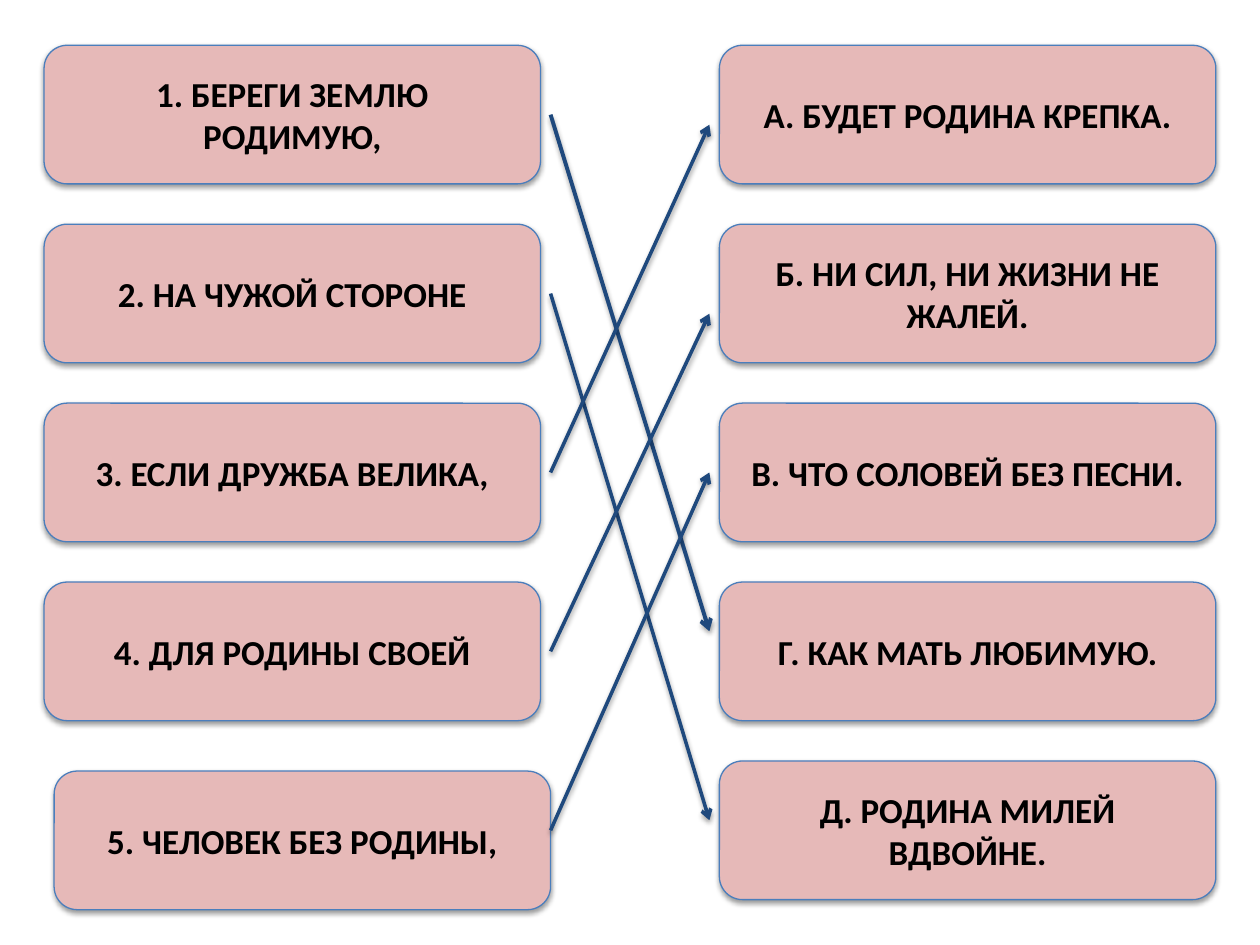
from lxml.etree import SubElement
from pptx import Presentation
from pptx.dml.color import RGBColor
from pptx.enum.shapes import MSO_CONNECTOR, MSO_SHAPE
from pptx.enum.text import MSO_ANCHOR, PP_ALIGN
from pptx.oxml.ns import qn
from pptx.util import Inches, Pt

CARD_WIDTH, CARD_HEIGHT = 3.94, 1.1
TOP, ROW_STEP = 0.36, 1.42
LEFT_COLUMN, RIGHT_COLUMN = 0.35, 5.71
ARROW_GAP = 0.08

BEGINNINGS = [
    "1. БЕРЕГИ ЗЕМЛЮ РОДИМУЮ,",
    "2. НА ЧУЖОЙ СТОРОНЕ",
    "3. ЕСЛИ ДРУЖБА ВЕЛИКА,",
    "4. ДЛЯ РОДИНЫ СВОЕЙ",
    "5. ЧЕЛОВЕК БЕЗ РОДИНЫ,",
]
ENDINGS = [
    "А. БУДЕТ РОДИНА КРЕПКА.",
    "Б. НИ СИЛ, НИ ЖИЗНИ НЕ ЖАЛЕЙ.",
    "В. ЧТО СОЛОВЕЙ БЕЗ ПЕСНИ.",
    "Г. КАК МАТЬ ЛЮБИМУЮ.",
    "Д. РОДИНА МИЛЕЙ ВДВОЙНЕ.",
]
# Start height, end height and line width of each answer arrow
ANSWERS = [
    (0.91, 5.01, 2.25),
    (2.33, 6.51, 2),
    (3.75, 0.99, 2),
    (5.17, 2.49, 2),
    (6.59, 3.75, 2),
]


def color(hex_value):
    return RGBColor.from_string(hex_value)


def add_shadow(shape):
    """Soft shadow just below the shape; call it after the line is set."""
    effects = SubElement(shape._element.spPr, qn("a:effectLst"))
    shadow = SubElement(effects, qn("a:outerShdw"), blurRad=str(Pt(3.1)),
                        dist=str(Pt(1.6)), dir="5400000", rotWithShape="0")
    black = SubElement(shadow, qn("a:srgbClr"), val="000000")
    SubElement(black, qn("a:alpha"), val="38000")


def write_text(shape, text, *, size=20, bold=True, font="Calibri", ink="000000"):
    frame = shape.text_frame
    frame.word_wrap = True
    frame.vertical_anchor = MSO_ANCHOR.MIDDLE
    paragraph = frame.paragraphs[0]
    paragraph.alignment = PP_ALIGN.CENTER
    run = paragraph.add_run()
    run.text = text
    run.font.size = Pt(size)
    run.font.bold = bold
    run.font.name = font
    run.font.color.rgb = color(ink)


def add_card(slide, left, top, width, height, text):
    card = slide.shapes.add_shape(MSO_SHAPE.ROUNDED_RECTANGLE, Inches(left),
                                  Inches(top), Inches(width), Inches(height))
    card.fill.solid()
    card.fill.fore_color.rgb = color("E6B9B8")
    card.line.color.rgb = color("4B7EBC")
    card.line.width = Pt(0.75)
    add_shadow(card)
    write_text(card, text)


def add_column(slide, left, top, texts, last_offset=0):
    """Stack of cards; last_offset shifts the last one right and down."""
    for row, text in enumerate(texts):
        offset = last_offset if row == len(texts) - 1 else 0
        add_card(slide, left + offset, top + row * ROW_STEP + offset,
                 CARD_WIDTH, CARD_HEIGHT, text)


def add_arrows(slide, left, right, answers):
    for start, end, width in answers:
        arrow = slide.shapes.add_connector(
            MSO_CONNECTOR.STRAIGHT, Inches(left), Inches(start),
            Inches(right), Inches(end))
        arrow.line.color.rgb = color("1F497D")
        arrow.line.width = Pt(width)
        SubElement(arrow.line._get_or_add_ln(), qn("a:tailEnd"), type="arrow")
        add_shadow(arrow)


def main():
    presentation = Presentation()
    presentation.slide_width = Inches(10)
    presentation.slide_height = Inches(7.5)
    slide = presentation.slides.add_slide(presentation.slide_layouts[6])

    # Proverb halves
    add_column(slide, LEFT_COLUMN, TOP, BEGINNINGS, last_offset=0.08)
    add_column(slide, RIGHT_COLUMN, TOP, ENDINGS)

    # Arrows joining the matching halves
    add_arrows(slide, LEFT_COLUMN + CARD_WIDTH + ARROW_GAP,
               RIGHT_COLUMN - ARROW_GAP, ANSWERS)

    presentation.save("out.pptx")


if __name__ == "__main__":
    main()
